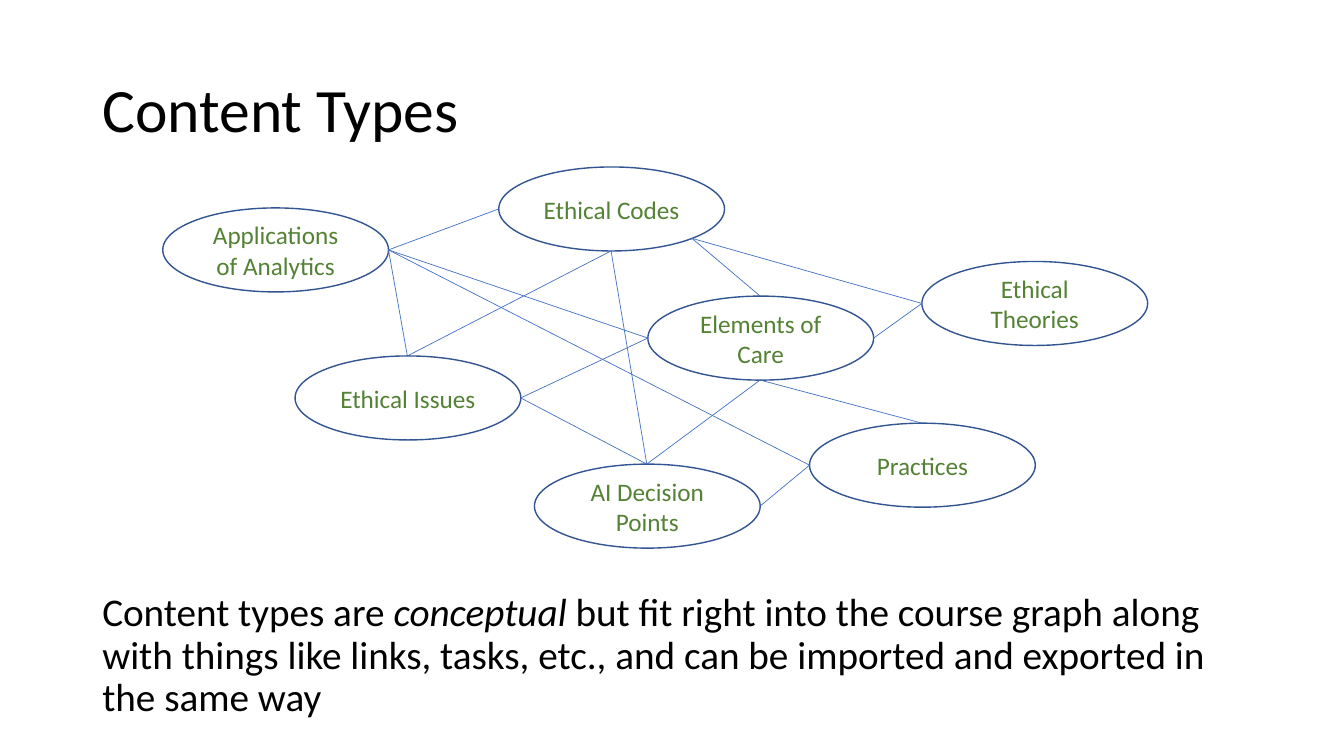
from dataclasses import dataclass
from enum import IntEnum
from math import cos, pi, sin

from lxml.etree import SubElement
from pptx import Presentation
from pptx.dml.color import RGBColor
from pptx.enum.shapes import MSO_CONNECTOR, MSO_SHAPE
from pptx.enum.text import MSO_ANCHOR, PP_ALIGN
from pptx.oxml.ns import qn
from pptx.shapes.autoshape import Shape
from pptx.slide import Slide
from pptx.text.text import Font, _Paragraph as Paragraph
from pptx.util import Pt

EMU_PER_PX = 9525
SLIDE_WIDTH, SLIDE_HEIGHT = 1280, 720
TEXT_LEFT, TEXT_WIDTH, TEXT_HEIGHT = 88, 1104, 139
NODE_WIDTH, NODE_HEIGHT = 215, 80

FONT_NAME = "Calibri"
BLACK = RGBColor(0x00, 0x00, 0x00)
GREEN = RGBColor(0x54, 0x82, 0x35)
OUTLINE_BLUE = RGBColor(0x32, 0x54, 0x91)
LINK_BLUE = RGBColor(0x44, 0x72, 0xC4)


class Site(IntEnum):
    """Connection sites of an ellipse, counted anticlockwise from the top."""
    TOP = 0
    LEFT = 2
    BOTTOM = 4
    BOTTOM_RIGHT = 5
    RIGHT = 6


@dataclass(frozen=True)
class ContentType:
    label: str
    left: int
    top: int

    def site_position(self, site: Site) -> tuple[int, int]:
        angle = site * pi / 4
        return (round(self.left + NODE_WIDTH / 2 * (1 - sin(angle))),
                round(self.top + NODE_HEIGHT / 2 * (1 - cos(angle))))


@dataclass(frozen=True)
class Link:
    start: ContentType
    start_site: Site
    end: ContentType
    end_site: Site


APPLICATIONS = ContentType("Applications of Analytics", 155, 198)
ISSUES = ContentType("Ethical Issues", 281, 339)
CODES = ContentType("Ethical Codes", 475, 159)
THEORIES = ContentType("Ethical Theories", 878, 249)
PRACTICES = ContentType("Practices", 771, 403)
DECISIONS = ContentType("AI Decision Points", 509, 442)
CARE = ContentType("Elements of Care", 617, 282)
CONTENT_TYPES = [APPLICATIONS, ISSUES, CODES, THEORIES, PRACTICES, DECISIONS, CARE]

LINKS = [
    Link(APPLICATIONS, Site.RIGHT, CODES, Site.LEFT),
    Link(APPLICATIONS, Site.RIGHT, ISSUES, Site.TOP),
    Link(CODES, Site.BOTTOM_RIGHT, CARE, Site.TOP),
    Link(APPLICATIONS, Site.RIGHT, CARE, Site.LEFT),
    Link(ISSUES, Site.RIGHT, CARE, Site.LEFT),
    Link(ISSUES, Site.RIGHT, DECISIONS, Site.TOP),
    Link(DECISIONS, Site.TOP, CARE, Site.BOTTOM),
    Link(CARE, Site.BOTTOM, PRACTICES, Site.TOP),
    Link(CARE, Site.RIGHT, THEORIES, Site.LEFT),
    Link(CODES, Site.BOTTOM_RIGHT, THEORIES, Site.LEFT),
    Link(PRACTICES, Site.LEFT, APPLICATIONS, Site.RIGHT),
    Link(DECISIONS, Site.RIGHT, PRACTICES, Site.LEFT),
    Link(DECISIONS, Site.TOP, CODES, Site.BOTTOM),
    Link(CODES, Site.BOTTOM, ISSUES, Site.TOP),
]


def to_emu(*lengths: int) -> list[int]:
    return [length * EMU_PER_PX for length in lengths]


def set_font(font: Font, size: int, color: RGBColor) -> None:
    font.name = FONT_NAME
    font.size = Pt(size)
    font.color.rgb = color


def add_text(slide: Slide, top: int, size: int, anchor: MSO_ANCHOR) -> Paragraph:
    """Add a full-width text box and return its empty paragraph."""
    box = slide.shapes.add_textbox(*to_emu(TEXT_LEFT, top, TEXT_WIDTH, TEXT_HEIGHT))
    box.text_frame.word_wrap = True
    box.text_frame.vertical_anchor = anchor
    paragraph = box.text_frame.paragraphs[0]
    paragraph.line_spacing = 0.9
    set_font(paragraph.font, size, BLACK)
    return paragraph


def add_node(slide: Slide, content_type: ContentType) -> Shape:
    node = slide.shapes.add_shape(
        MSO_SHAPE.OVAL,
        *to_emu(content_type.left, content_type.top, NODE_WIDTH, NODE_HEIGHT))
    node.shadow.inherit = False
    node.fill.background()
    node.line.color.rgb = OUTLINE_BLUE
    node.line.width = Pt(1)
    node.text_frame.word_wrap = True
    node.text_frame.vertical_anchor = MSO_ANCHOR.MIDDLE
    label = node.text_frame.paragraphs[0]
    label.text = content_type.label
    label.alignment = PP_ALIGN.CENTER
    set_font(label.font, 18, GREEN)
    return node


def add_link(slide: Slide, link: Link, nodes: dict[ContentType, Shape]) -> None:
    """Draw a link and join it to the ellipse sites, which number up to 7."""
    line = slide.shapes.add_connector(
        MSO_CONNECTOR.STRAIGHT,
        *to_emu(*link.start.site_position(link.start_site),
                *link.end.site_position(link.end_site)))
    line.line.color.rgb = LINK_BLUE
    line.line.width = Pt(0.5)
    SubElement(line.element.spPr, qn("a:effectLst"))
    joints = line.element.nvCxnSpPr.cNvCxnSpPr
    for tag, content_type, site in (("a:stCxn", link.start, link.start_site),
                                    ("a:endCxn", link.end, link.end_site)):
        SubElement(joints, qn(tag), id=str(nodes[content_type].shape_id),
                   idx=str(site.value))


def main() -> None:
    presentation = Presentation()
    presentation.slide_width, presentation.slide_height = to_emu(SLIDE_WIDTH, SLIDE_HEIGHT)
    slide = presentation.slides.add_slide(presentation.slide_layouts[6])

    title = add_text(slide, 38, 44, MSO_ANCHOR.MIDDLE)
    title.text = "Content Types"

    summary = add_text(slide, 560, 28, MSO_ANCHOR.TOP)
    summary.space_before = Pt(10)
    summary.add_run().text = "Content types are "
    emphasis = summary.add_run()
    emphasis.text = "conceptual"
    emphasis.font.italic = True
    summary.add_run().text = (
        " but fit right into the course graph along with things like links, tasks, "
        "etc., and can be imported and exported in the same way")

    nodes = {content_type: add_node(slide, content_type) for content_type in CONTENT_TYPES}
    for link in LINKS:
        add_link(slide, link, nodes)

    presentation.save("out.pptx")


if __name__ == "__main__":
    main()
